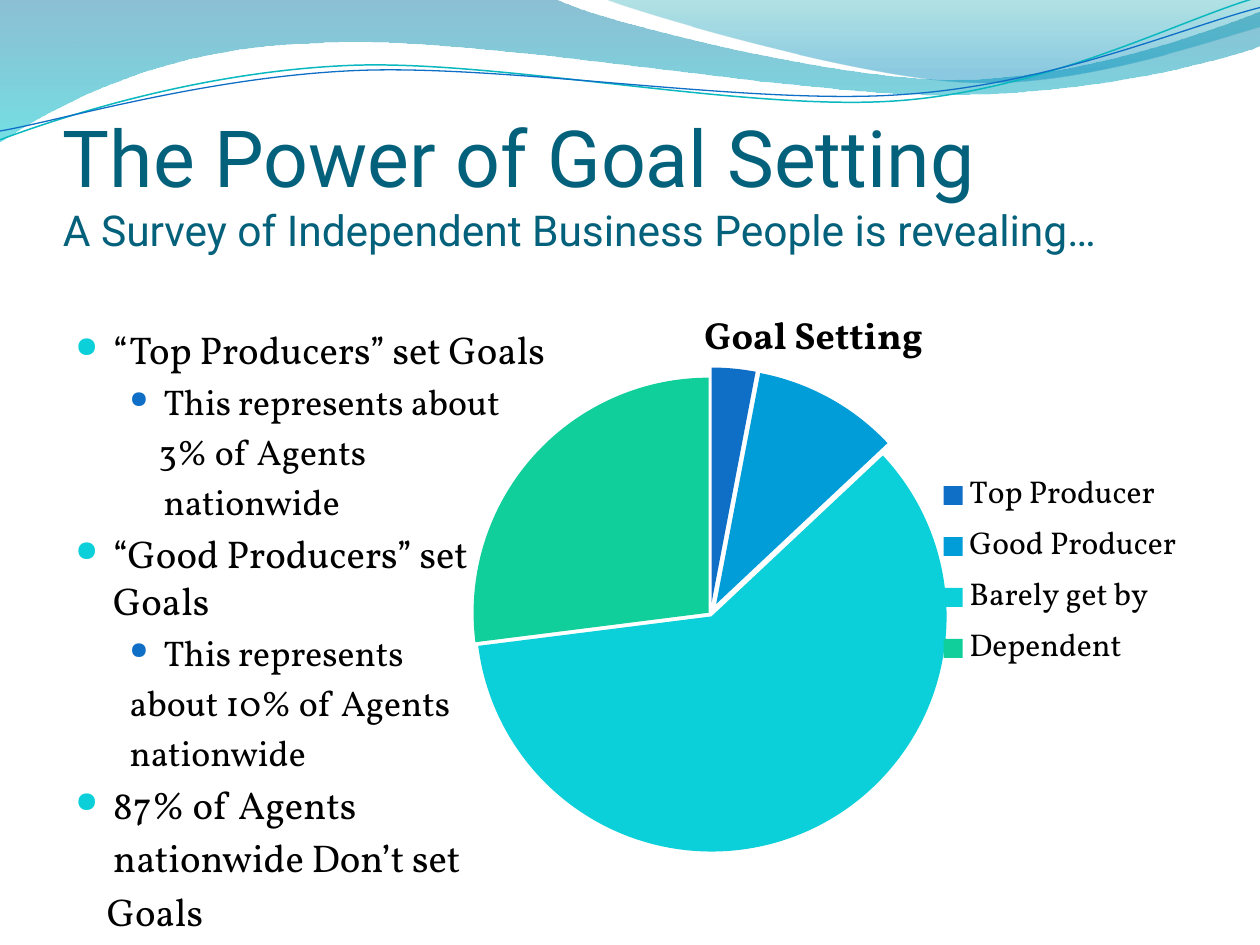
from pptx import Presentation
from pptx import util as u
from pptx.chart.data import CategoryChartData
from pptx.dml.color import RGBColor
from pptx.enum import chart as ch, text
from pptx.oxml import parse_xml
from pptx.oxml.ns import nsdecls, qn

HEAD, BODY = "Roboto", "Vollkorn"
TITLE = [("The Power of Goal Setting", 45),
         ("A Survey of Independent Business People is revealing…", 24.3)]

# Body lines: text, level, left margin, bulleted
LINES = [
    ("“Top Producers” set Goals", 0, 0.3, True),
    ("This represents about", 1, 0.7, True),
    ("3% of Agents", 1, 0.66, False),
    ("nationwide", 1, 0.7, False),
    ("“Good Producers” set\vGoals", 0, 0.3, True),
    ("This represents", 1, 0.7, True),
    ("about 10% of Agents", 1, 0.43, False),
    ("nationwide", 1, 0.43, False),
    ("87% of Agents", 0, 0.3, True),
    ("nationwide Don’t set", 0, 0.3, False),
    ("Goals", 0, 0.25, False),
]
# Per level: size, line height, hanging indent, bullet colour, bullet size %
LEVELS = [(22.1, 26.9, 0.3, "0BD0D9", 74), (20.4, 24.8, 0.27, "0F6FC6", 66)]

# Slices: name, value, colour, explosion %
SLICES = [("Top Producer", 3, "0F6FC6", 5), ("Good Producer", 10, "009DD9", 5),
          ("Barely get by", 60, "0BD0D9", 1), ("Dependent", 27, "10CF9B", 1)]
PLOT = {"x": 0.053, "y": 0.166, "w": 0.624, "h": 0.815}

# Outlines: a pair is a line to a point, six numbers are a cubic curve
BANDS = [
    ([(0, 0), (4.4, -0.01), (4.76, 0.17, 6.64, 0.63, 7.58, 0.63),
      (8.53, 0.63, 9.58, 0.26, 10, 0.09), (10.01, 0.36),
      (9.83, 0.44, 8.7, 0.76, 7.46, 0.75), (6.22, 0.75, 3.82, 0.28, 2.57, 0.34),
      (1.29, 0.36, 0.46, 0.83, -0.01, 1.13)],
     [(0, "0074A1", 45), (1, "00C6CF", 55)]),
    ([(4.79, -0.01), (5.09, 0.11, 6.82, 0.62, 7.69, 0.65),
      (8.56, 0.69, 9.61, 0.32, 10, 0.21), (10, 0)],
     [(0, "00A1A9", 30), (0.8, "008BBF", 45)]),
]
WAVES = [
    ([(0, 1.11), (0.48, 0.93, 1.58, 0.57, 2.77, 0.52),
      (3.95, 0.47, 5.93, 0.89, 7.13, 0.8), (8.33, 0.71, 9.38, 0.15, 9.98, -0.02)],
     "0AB8BF", 0.85),
    ([(0, 1.04), (0.47, 0.96, 1.64, 0.61, 2.83, 0.56),
      (4.03, 0.51, 5.97, 0.84, 7.17, 0.75), (8.36, 0.67, 9.41, 0.21, 10, 0.06)],
     "0F6FC6", 0.75),
]


def rgb(value):
    return RGBColor.from_string(value)


def set_font(font, name, size, color):
    font.name, font.size = name, u.Pt(size)
    font.color.rgb = rgb(color)


def add_outline(s, segments, close):
    """Lay out every point in order, then merge each curve's three points."""
    points = [(u.Inches(seg[i]), u.Inches(seg[i + 1]))
              for seg in segments for i in range(0, len(seg), 2)]
    builder = s.shapes.build_freeform(*points[0], scale=1.0)
    builder.add_line_segments(points[1:], close=close)
    sp = builder.convert_to_shape()
    sp.shadow.inherit = False
    steps = iter(list(sp._element.spPr.iter(qn("a:lnTo"))))
    for seg in segments[1:]:
        step = next(steps)
        if len(seg) == 6:
            curve = parse_xml(f'<a:cubicBezTo {nsdecls("a")}/>')
            step.addprevious(curve)
            for part in (step, next(steps), next(steps)):
                curve.append(part[0])
                part.getparent().remove(part)
    return sp


def add_band(s, segments, stops):
    sp = add_outline(s, segments, True)
    sp.line.fill.background()
    sp.fill.gradient()
    sp.fill.gradient_angle = 270
    for stop, (position, color, _) in zip(sp.fill.gradient_stops, stops):
        stop.position, stop.color.rgb = position, rgb(color)
    colors = sp._element.spPr.iter(qn("a:srgbClr"))
    for color, (_, _, alpha) in zip(list(colors), stops):
        color.append(parse_xml(f'<a:alpha {nsdecls("a")} val="{alpha * 1000}"/>'))


def add_wave(s, segments, color, width):
    sp = add_outline(s, segments, False)
    sp.fill.background()
    sp.line.color.rgb = rgb(color)
    sp.line.width = u.Pt(width)


def add_text(s, box, insets):
    tf = s.shapes.add_textbox(*map(u.Inches, box)).text_frame
    tf.word_wrap = True
    tf.margin_left, tf.margin_top, tf.margin_right, tf.margin_bottom = map(u.Inches, insets)
    return tf


def add_title(s):
    tf = add_text(s, (0.5, 0.77, 9, 1.25), (0, 0.05, 0, 0))
    tf.vertical_anchor = text.MSO_ANCHOR.BOTTOM
    p = tf.paragraphs[0]
    for i, (line, size) in enumerate(TITLE):
        if i:
            p.add_line_break()
        r = p.add_run()
        r.text = line
        set_font(r.font, HEAD, size, "04617B")


def add_body(s):
    tf = add_text(s, (0.5, 2.1, 4.42, 4.85), (0.1, 0.48, 0.1, 0.05))
    for i, (line, level, margin, bulleted) in enumerate(LINES):
        size, height, hanging, color, scale = LEVELS[level]
        p = tf.add_paragraph() if i else tf.paragraphs[0]
        p.text, p.level = line, level
        p.line_spacing = u.Pt(height)
        p.space_before = u.Pt(3.8 if i else 0)
        set_font(p.font, BODY, size, "000000")
        pPr = p._p.get_or_add_pPr()
        pPr.set("marL", str(u.Inches(margin)))
        pPr.set("indent", str(u.Inches(-hanging) if bulleted else 0))
        if bulleted:
            marks = (f'<a:buClr {nsdecls("a")}><a:srgbClr val="{color}"/></a:buClr>',
                     f'<a:buSzPct {nsdecls("a")} val="{scale * 1000}"/>',
                     f'<a:buChar {nsdecls("a")} char="●"/>')
            for mark in marks:
                pPr.insert_element_before(parse_xml(mark), "a:defRPr")


def add_pie(s):
    data = CategoryChartData()
    data.categories = [row[0] for row in SLICES]
    data.add_series("Goal Setting", [row[1] for row in SLICES])
    chart = s.shapes.add_chart(ch.XL_CHART_TYPE.PIE, *map(u.Inches, (3.42, 2.25, 6.08, 4.58)),
                               data).chart
    set_font(chart.font, BODY, 18, "000000")
    chart.has_title = True
    p = chart.chart_title.text_frame.paragraphs[0]
    p.text = "Goal Setting"
    set_font(p.font, BODY, 21.6, "000000")
    p.font.bold = True
    chart.has_legend = True
    chart.legend.position = ch.XL_LEGEND_POSITION.RIGHT
    chart.legend.include_in_layout = False

    plot = chart.plots[0]
    plot.vary_by_categories = True
    series = plot.series[0]
    for i, (_, _, color, _) in enumerate(SLICES):
        fill = series.points[i].format.fill
        fill.solid()
        fill.fore_color.rgb = rgb(color)
    # Pull the slices apart
    for dPt, row in zip(series._element.findall(qn("c:dPt")), SLICES):
        dPt.find(qn("c:spPr")).addprevious(
            parse_xml(f'<c:explosion {nsdecls("c")} val="{row[3]}"/>'))
    # Fix the inner plot area
    area = chart._chartSpace.chart.plotArea
    for old in area.findall(qn("c:layout")):
        area.remove(old)
    modes = "".join(f'<c:{k}Mode val="edge"/>' for k in "xy")
    sizes = "".join(f'<c:{k} val="{v}"/>' for k, v in PLOT.items())
    area.insert(0, parse_xml(
        f'<c:layout {nsdecls("c")}><c:manualLayout><c:layoutTarget val="inner"/>'
        f'{modes}{sizes}</c:manualLayout></c:layout>'))


def main():
    prs = Presentation()
    prs.slide_width, prs.slide_height = u.Inches(10), u.Inches(7.5)
    s = prs.slides.add_slide(prs.slide_layouts[6])
    for band in BANDS:
        add_band(s, *band)
    for wave in WAVES:
        add_wave(s, *wave)
    add_title(s)
    add_body(s)
    add_pie(s)
    prs.save("out.pptx")


if __name__ == "__main__":
    main()
